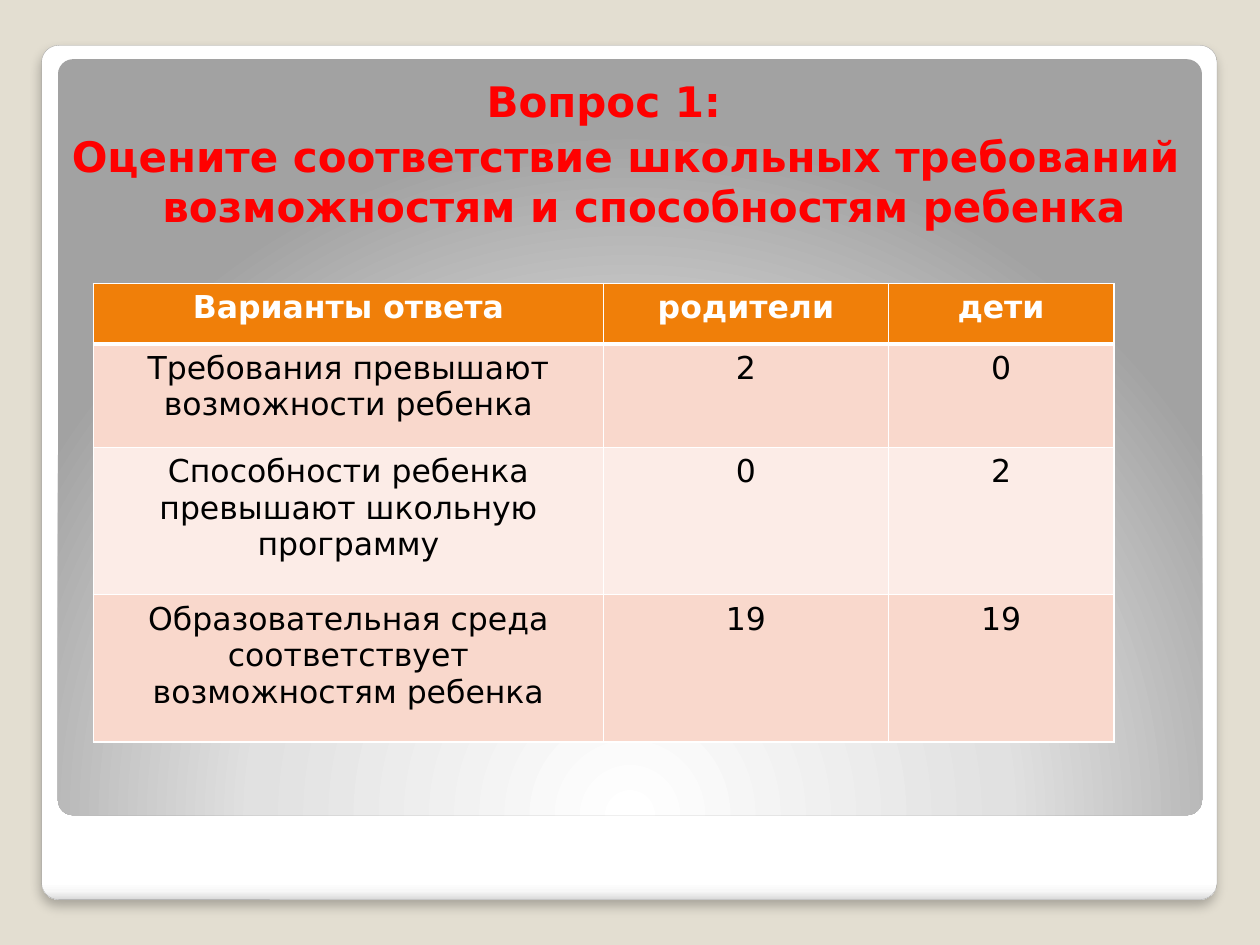
from dataclasses import dataclass

from lxml import etree
from pptx import Presentation
from pptx.dml.color import RGBColor
from pptx.enum import shapes, text
from pptx.oxml import parse_xml
from pptx.oxml.ns import nsdecls, qn
from pptx.util import Inches, Pt


@dataclass(frozen=True)
class Theme:
    font: str = "DejaVu Sans"
    title_size: int = 24
    table_size: int = 18
    background: str = "E3DED1"
    outline: str = "A4A4A4"
    shadow: str = "000000"
    title: str = "FF0000"
    header: str = "F07F09"
    header_text: str = "FFFFFF"
    body_text: str = "000000"
    bands: tuple = ("F9D8CC", "FCECE7")
    border: str = "FFFFFF"
    frame_stops: tuple = ((0, "FFFFFF"), (98, "FFFFFF"), (99, "F7F7F7"), (100, "DADADA"))
    panel_stops: tuple = ((0, "FFFFFF"), (55, "E1E1E1"), (100, "A2A2A2"))


FRAME_DIRECTION = '<a:lin ang="5400000" scaled="0"/>'
PANEL_DIRECTION = ('<a:path path="circle">'
                   '<a:fillToRect l="50000" t="175000" r="50000" b="-75000"/></a:path>')


def write(paragraph, content, *, font, size, color, bold=False):
    """Add a centred, formatted run to the paragraph."""
    paragraph.alignment = text.PP_ALIGN.CENTER
    run = paragraph.add_run()
    run.text = content
    run.font.name = font
    run.font.size = Pt(size)
    run.font.bold = bold
    run.font.color.rgb = RGBColor.from_string(color)


def set_borders(cell, color, widths):
    """Draw cell borders; widths are points for left, right, top, bottom."""
    properties = cell._tc.get_or_add_tcPr()
    for position, (side, width) in enumerate(zip("LRTB", widths)):
        properties.insert(position, parse_xml(
            f'<a:ln{side} {nsdecls("a")} w="{Pt(width)}"><a:solidFill>'
            f'<a:srgbClr val="{color}"/></a:solidFill></a:ln{side}>'))


class SlideBuilder:
    def __init__(self, slide, theme):
        self.slide = slide
        self.theme = theme

    def background(self):
        fill = self.slide.background.fill
        fill.solid()
        fill.fore_color.rgb = RGBColor.from_string(self.theme.background)

    def rounded_panel(self, left, top, width, height, stops, direction):
        shape = self.slide.shapes.add_shape(
            shapes.MSO_SHAPE.ROUNDED_RECTANGLE,
            Inches(left), Inches(top), Inches(width), Inches(height))
        shape.adjustments[0] = 0.02
        shape.shadow.inherit = False
        shape.line.fill.background()
        shape.fill.background()
        stop_xml = "".join(
            f'<a:gs pos="{position * 1000}"><a:srgbClr val="{color}"/></a:gs>'
            for position, color in stops)
        gradient = parse_xml(f'<a:gradFill {nsdecls("a")} rotWithShape="1">'
                             f'<a:gsLst>{stop_xml}</a:gsLst>{direction}</a:gradFill>')
        properties = shape._element.spPr
        properties.replace(properties.find(qn("a:noFill")), gradient)
        return shape

    def outline_and_shadow(self, shape):
        shape.line.color.rgb = RGBColor.from_string(self.theme.outline)
        shape.line.width = Pt(0.16)
        effects = shape._element.spPr.find(qn("a:effectLst"))
        shadow = etree.SubElement(effects, qn("a:outerShdw"), blurRad=str(Pt(6)),
                                  dist=str(Pt(4)), dir="5400000", algn="tl",
                                  rotWithShape="0")
        color = etree.SubElement(shadow, qn("a:srgbClr"), val=self.theme.shadow)
        etree.SubElement(color, qn("a:alpha"), val="25000")

    def heading(self, left, top, width, height, lines):
        box = self.slide.shapes.add_textbox(
            Inches(left), Inches(top), Inches(width), Inches(height))
        frame = box.text_frame
        frame.word_wrap = True
        frame.margin_left, frame.margin_top = Inches(0.2), Inches(0.1)
        frame.margin_right, frame.margin_bottom = Inches(0.1), Inches(0.05)
        for index, line in enumerate(lines):
            paragraph = frame.add_paragraph() if index else frame.paragraphs[0]
            paragraph.space_before = Pt(2.5)
            properties = paragraph._p.get_or_add_pPr()
            properties.set("marL", str(Inches(0.29)))
            properties.set("indent", str(Inches(-0.29)))
            write(paragraph, line, font=self.theme.font, size=self.theme.title_size,
                  color=self.theme.title, bold=True)

    def table(self, left, top, column_widths, row_heights, rows):
        theme = self.theme
        table = self.slide.shapes.add_table(
            len(rows), len(column_widths), Inches(left), Inches(top),
            Inches(sum(column_widths)), Inches(sum(row_heights))).table
        for column, width in zip(table.columns, column_widths):
            column.width = Inches(width)
        for index, (row, height, values) in enumerate(zip(table.rows, row_heights, rows)):
            row.height = Inches(height)
            header = index == 0
            fill = theme.header if header else theme.bands[(index - 1) % 2]
            widths = (1, 1, 3 if index == 1 else 1, 3 if header else 1)
            for cell, value in zip(row.cells, values):
                cell.fill.solid()
                cell.fill.fore_color.rgb = RGBColor.from_string(fill)
                set_borders(cell, theme.border, widths)
                write(cell.text_frame.paragraphs[0], value, font=theme.font,
                      size=theme.table_size, bold=header,
                      color=theme.header_text if header else theme.body_text)


def main():
    presentation = Presentation()
    presentation.slide_width, presentation.slide_height = Inches(10), Inches(7.5)
    theme = Theme()
    builder = SlideBuilder(
        presentation.slides.add_slide(presentation.slide_layouts[6]), theme)

    builder.background()
    frame = builder.rounded_panel(0.33, 0.36, 9.33, 6.78, theme.frame_stops, FRAME_DIRECTION)
    builder.outline_and_shadow(frame)
    builder.rounded_panel(0.46, 0.47, 9.08, 6, theme.panel_stops, PANEL_DIRECTION)
    builder.heading(0.33, 0.5, 9.17, 6.42, [
        "Вопрос 1:   ",
        "Оцените соответствие школьных требований возможностям и способностям ребенка",
    ])
    builder.table(0.74, 2.25, [4.05, 2.26, 1.79], [0.48, 0.82, 1.17, 1.17], [
        ("Варианты ответа", "родители", "дети"),
        ("Требования превышают возможности ребенка", "2", "0"),
        ("Способности ребенка превышают школьную программу", "0", "2"),
        ("Образовательная среда соответствует возможностям ребенка", "19", "19"),
    ])
    presentation.save("out.pptx")


if __name__ == "__main__":
    main()
